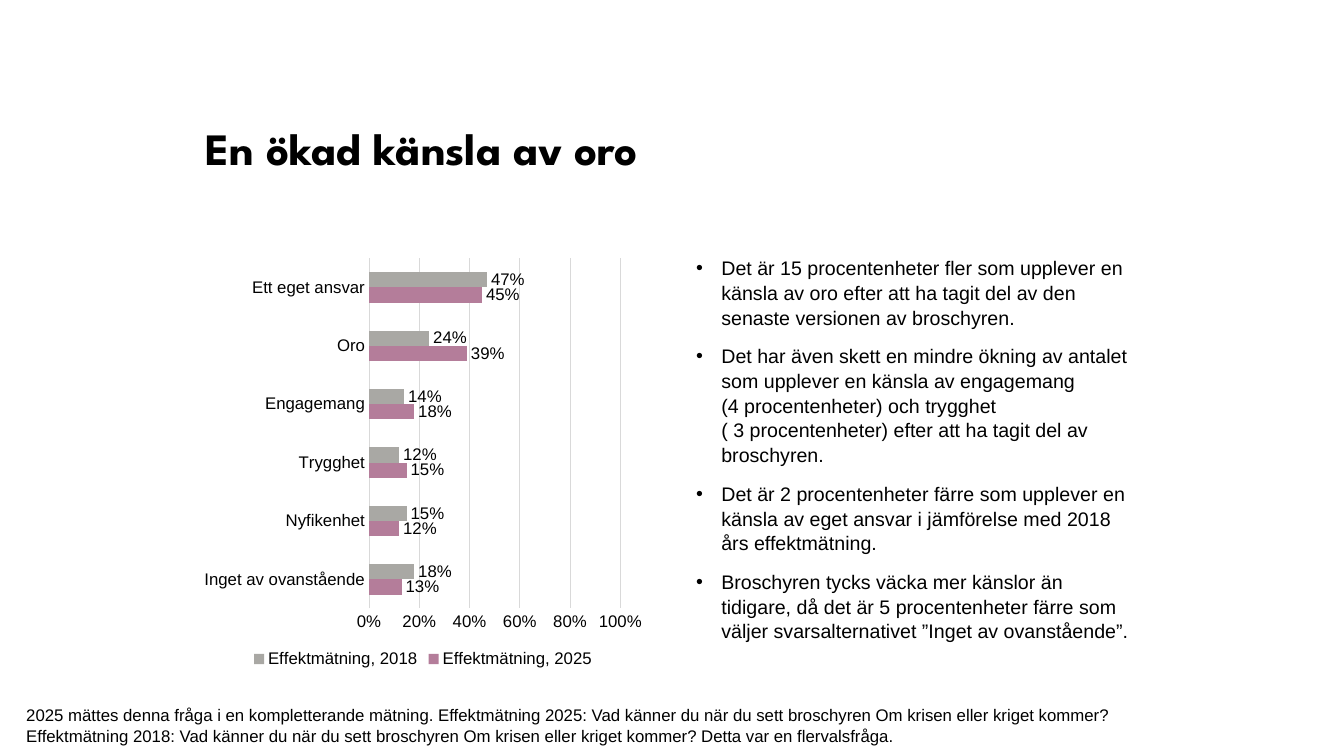
from dataclasses import dataclass

from lxml import etree
from pptx import Presentation
from pptx.chart.data import CategoryChartData
from pptx.dml.color import RGBColor
from pptx.enum.chart import XL_CHART_TYPE, XL_LABEL_POSITION, XL_LEGEND_POSITION, XL_TICK_MARK
from pptx.enum.text import MSO_ANCHOR, MSO_AUTO_SIZE, PP_ALIGN
from pptx.oxml.ns import qn
from pptx.util import Emu, Pt

BAR_CLUSTERED = XL_CHART_TYPE.BAR_CLUSTERED
OUTSIDE_END = XL_LABEL_POSITION.OUTSIDE_END
BOTTOM = XL_LEGEND_POSITION.BOTTOM
NO_TICK = XL_TICK_MARK.NONE
TOP = MSO_ANCHOR.TOP
NO_AUTO_SIZE = MSO_AUTO_SIZE.NONE
LEFT = PP_ALIGN.LEFT

BLACK = RGBColor(0x00, 0x00, 0x00)
GRID_GREY = RGBColor(0xD9, 0xD9, 0xD9)
PLUM = RGBColor(0xB4, 0x7D, 0x9A)
STONE = RGBColor(0xA9, 0xA8, 0xA4)

EMU_PER_PX = 9525
BODY_FONT = "Arial"
TITLE_FONT = "League Spartan"
PERCENT = "0%"


@dataclass(frozen=True)
class Area:
    left: int
    top: int
    width: int
    height: int


@dataclass(frozen=True)
class Survey:
    name: str
    shares: tuple[float, ...]
    color: RGBColor


@dataclass(frozen=True)
class TextStyle:
    font: str
    size: int
    bold: bool = False
    line_spacing: float = 1.05
    space_before: int = 0
    indent: int = 0
    inset: tuple[int, int] = (10, 5)


TITLE_AREA = Area(186, 116, 900, 102)
CHART_AREA = Area(186, 238, 434, 402)
FINDINGS_AREA = Area(653, 238, 434, 402)
NOTE_AREA = Area(25, 670, 1062, 38)

TITLE_STYLE = TextStyle(TITLE_FONT, 32, bold=True, line_spacing=0.9)
FINDINGS_STYLE = TextStyle(BODY_FONT, 14, space_before=10, indent=24)
NOTE_STYLE = TextStyle(BODY_FONT, 12, inset=(0, 0))

FEELINGS = (
    "Inget av ovanstående", "Nyfikenhet", "Trygghet",
    "Engagemang", "Oro", "Ett eget ansvar",
)
SURVEYS = (
    Survey("Effektmätning, 2025", (0.13, 0.12, 0.15, 0.18, 0.39, 0.45), PLUM),
    Survey("Effektmätning, 2018", (0.18, 0.15, 0.12, 0.14, 0.24, 0.47), STONE),
)

TITLE = "En ökad känsla av oro"
FINDINGS = (
    "Det är 15 procentenheter fler som upplever en känsla av oro efter att ha "
    "tagit del av den senaste versionen av broschyren.",
    "Det har även skett en mindre ökning av antalet som upplever en känsla av "
    "engagemang\v(4 procentenheter) och trygghet\v( 3 procentenheter) efter att "
    "ha tagit del av broschyren.",
    "Det är 2 procentenheter färre som upplever en känsla av eget ansvar i "
    "jämförelse med 2018 års effektmätning.",
    "Broschyren tycks väcka mer känslor än tidigare, då det är 5 procentenheter "
    "färre som väljer svarsalternativet ”Inget av ovanstående”.",
)
NOTE = (
    "2025 mättes denna fråga i en kompletterande mätning. Effektmätning 2025: "
    "Vad känner du när du sett broschyren Om krisen eller kriget kommer? "
    "Effektmätning 2018: Vad känner du när du sett broschyren Om krisen eller "
    "kriget kommer? Detta var en flervalsfråga."
)


def px(length: int) -> Emu:
    return Emu(length * EMU_PER_PX)


def bounds(area: Area) -> tuple[Emu, Emu, Emu, Emu]:
    return px(area.left), px(area.top), px(area.width), px(area.height)


def apply_format(target, values: dict) -> None:
    for name, value in values.items():
        setattr(target, name, value)


def format_font(font, name: str, size: int, bold: bool = False) -> None:
    apply_format(font, {"name": name, "size": Pt(size), "bold": bold})
    font.color.rgb = BLACK


def add_bullet(para, indent: int) -> None:
    properties = para._p.get_or_add_pPr()
    properties.set("marL", str(px(indent)))
    properties.set("indent", str(-px(indent)))
    etree.SubElement(properties, qn("a:buFont")).set("typeface", BODY_FONT)
    etree.SubElement(properties, qn("a:buChar")).set("char", "•")


def write_text(box, texts: tuple[str, ...], style: TextStyle) -> None:
    frame = box.text_frame
    side, edge = map(px, style.inset)
    apply_format(frame, {
        "word_wrap": True, "auto_size": NO_AUTO_SIZE, "vertical_anchor": TOP,
        "margin_left": side, "margin_right": side,
        "margin_top": edge, "margin_bottom": edge,
    })
    for index, text in enumerate(texts):
        para = frame.add_paragraph() if index else frame.paragraphs[0]
        para.text = text
        if style.indent:
            add_bullet(para, style.indent)
        apply_format(para, {
            "alignment": LEFT, "line_spacing": style.line_spacing,
            "space_before": Pt(style.space_before if index else 0),
        })
        for span in para.runs:
            format_font(span.font, style.font, style.size, style.bold)


def add_text(page, area: Area, texts: tuple[str, ...], style: TextStyle) -> None:
    write_text(page.shapes.add_textbox(*bounds(area)), texts, style)


def format_line(line) -> None:
    line.color.rgb = GRID_GREY
    line.width = Pt(0.75)


def add_feelings_chart(page) -> None:
    data = CategoryChartData(number_format=PERCENT)
    data.categories = FEELINGS
    for survey in SURVEYS:
        data.add_series(survey.name, survey.shares)
    chart = page.shapes.add_chart(BAR_CLUSTERED, *bounds(CHART_AREA), data).chart
    chart.has_title = False
    format_font(chart.font, BODY_FONT, 10)
    chart.has_legend = True
    apply_format(chart.legend, {"position": BOTTOM, "include_in_layout": False})
    format_font(chart.legend.font, BODY_FONT, 12)

    for axis in (chart.category_axis, chart.value_axis):
        apply_format(axis, {"major_tick_mark": NO_TICK, "minor_tick_mark": NO_TICK})
        format_font(axis.tick_labels.font, BODY_FONT, 12)
    format_line(chart.category_axis.format.line)
    shares = chart.value_axis
    apply_format(shares, {"minimum_scale": 0, "maximum_scale": 1, "major_unit": 0.2})
    apply_format(shares.tick_labels, {"number_format": PERCENT, "number_format_is_linked": False})
    shares.format.line.fill.background()
    format_line(shares.major_gridlines.format.line)

    plot = chart.plots[0]
    apply_format(plot, {"gap_width": 182, "overlap": 0, "vary_by_categories": False})
    for series, survey in zip(plot.series, SURVEYS):
        series.format.fill.solid()
        series.format.fill.fore_color.rgb = survey.color
        labels = series.data_labels
        apply_format(labels, {
            "show_value": True, "position": OUTSIDE_END,
            "number_format": PERCENT, "number_format_is_linked": False,
        })
        format_font(labels.font, BODY_FONT, 12)


def main() -> None:
    deck = Presentation()
    apply_format(deck, {"slide_width": px(1280), "slide_height": px(720)})
    page = deck.slides.add_slide(deck.slide_layouts.get_by_name("Title Only"))
    title = page.shapes.title
    for name, length in zip(("left", "top", "width", "height"), bounds(TITLE_AREA)):
        setattr(title, name, length)
    write_text(title, (TITLE,), TITLE_STYLE)
    add_feelings_chart(page)
    add_text(page, FINDINGS_AREA, FINDINGS, FINDINGS_STYLE)
    add_text(page, NOTE_AREA, (NOTE,), NOTE_STYLE)
    deck.save("out.pptx")


if __name__ == "__main__":
    main()
